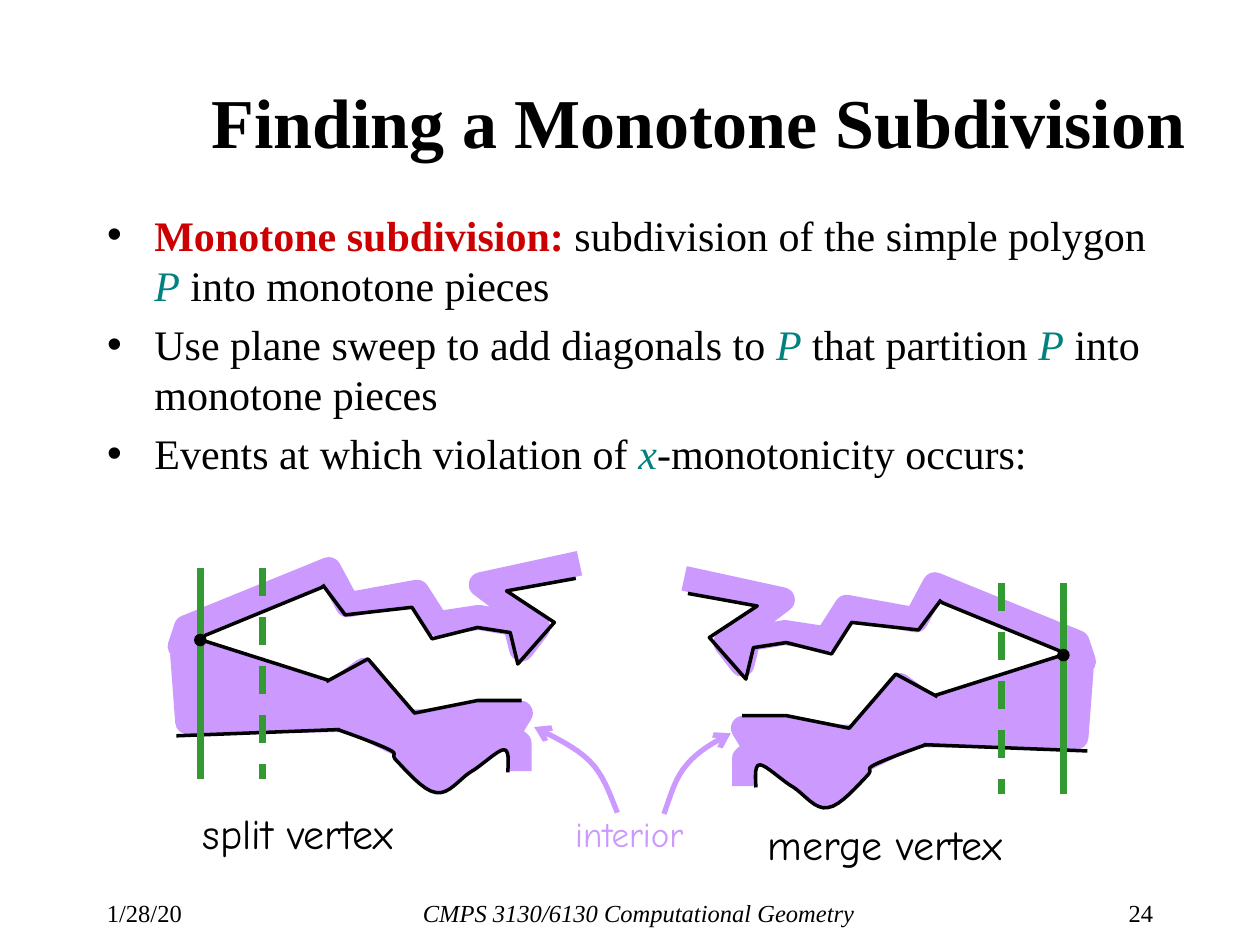
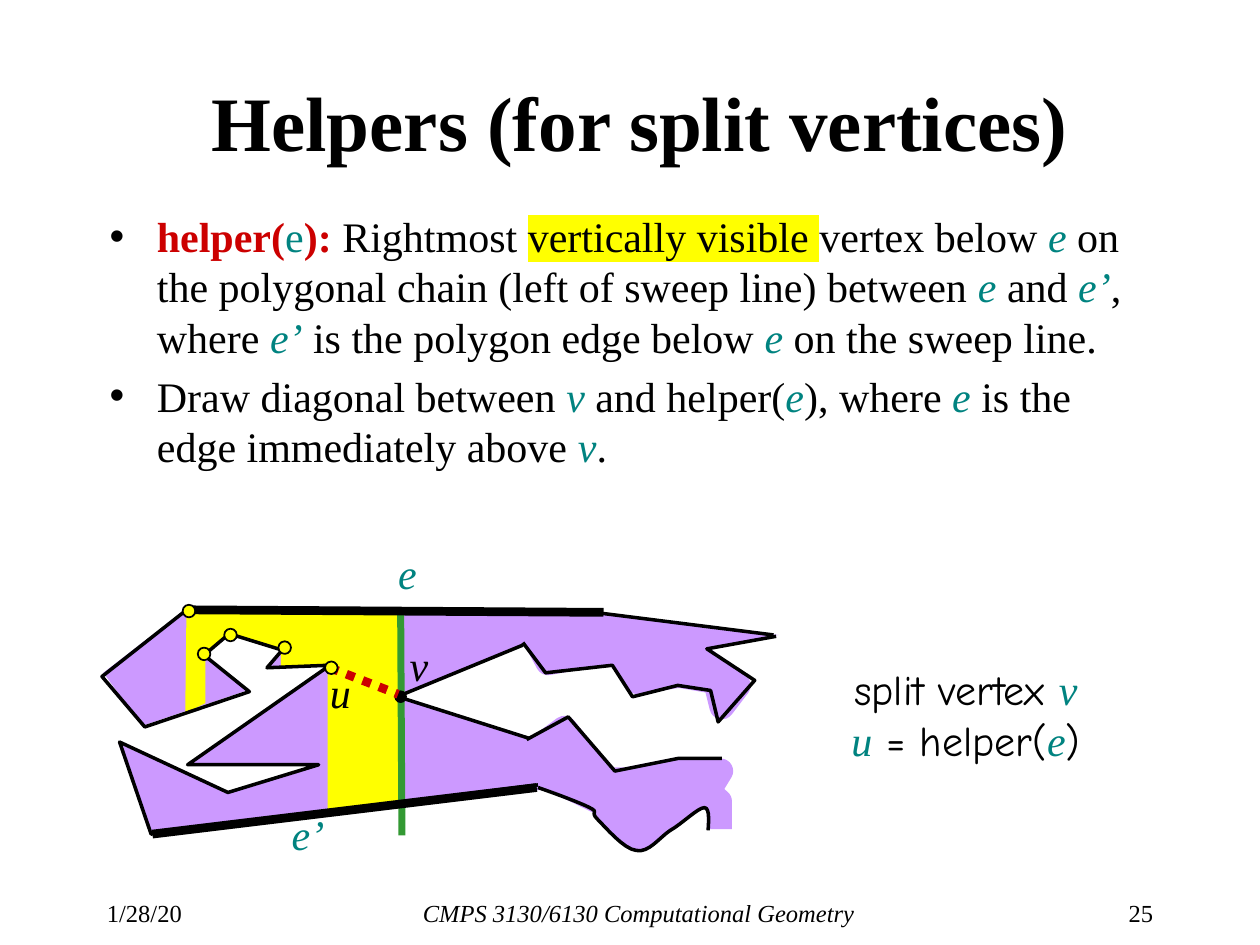
from dataclasses import dataclass

from lxml import etree
from pptx import Presentation
from pptx import util as u
from pptx.dml.color import RGBColor
from pptx.enum import dml, shapes, text
from pptx.oxml.ns import qn


@dataclass(frozen=True)
class Theme:
    ink: str = "000000"
    term: str = "CC0000"
    math: str = "008380"
    interior: str = "CC99FF"
    sweep: str = "339933"
    mark: str = "FFFF00"
    serif: str = "Times New Roman"
    hand: str = "Comic Neue"
    body: int = 24
    small_label: int = 20
    footer: int = 14
    band: float = 14.25
    edge: int = 2
    bold_edge: int = 5
    sweep_width: int = 4


THEME = Theme()
DOT = 0.1

# Split vertex figure, in inches on the first slide
LOWER_FILL = [(2.62, 5.52), (2.89, 5.32), (3.21, 5.73), (3.38, 5.73), (3.79, 5.65),
              (4.13, 5.66), (4.02, 5.84), (3.4, 6.12), (3.13, 5.86)]
LEFT_FILL = [(1.45, 5.2), (1.49, 5.73), (2.59, 5.66), (2.55, 5.49)]
LOWER_BAND = [(1.48, 5.73), (2.77, 5.71), (3.2, 5.92), (3.31, 6.07), (3.47, 6.2),
              (3.89, 5.87), (4.04, 5.83), (4.12, 5.9), (4.12, 6.12)]
UPPER_BAND = [(2.6, 5.49), (1.43, 5.13), (1.48, 4.98), (2.61, 4.52), (2.76, 4.8),
              (3.31, 4.7), (3.47, 4.95), (3.8, 4.9), (4.09, 4.95), (4.14, 5.15),
              (4.27, 4.98), (3.82, 4.64)]
UPPER_CHAIN = [(2.56, 4.64), (2.74, 4.88), (3.27, 4.82), (3.43, 5.07), (3.79, 4.98),
               (4.05, 5.02), (4.11, 5.27), (4.4, 4.94), (4.02, 4.69), (4.57, 4.59)]
LOWER_CHAIN = [(2.59, 5.41), (2.92, 5.23), (3.29, 5.66), (3.79, 5.56), (4.14, 5.56)]
WAVE = [(2.68, 5.79), (2.85, 5.85), (3.01, 5.91), (3.09, 5.95),
        (3.17, 5.99), (3.09, 5.98), (3.15, 6.04), (3.21, 6.1), (3.36, 6.28), (3.46, 6.29),
        (3.56, 6.31), (3.64, 6.19), (3.73, 6.13), (3.82, 6.08), (3.95, 5.95), (4, 5.95),
        (4.05, 5.95), (4.03, 6.1), (4.03, 6.13)]
SPLIT_EDGES = [[(1.61, 5.05), (2.56, 4.66)], [(1.57, 5.07), (2.61, 5.4)]]
FLOOR = [(1.4, 5.84), (2.7, 5.79)]
SPLIT_VERTEX = (1.59, 5.08)
SWEEP_NOW = [(1.59, 4.51), (1.59, 6.18)]
SWEEP_NEXT = [(2.08, 4.51), (2.08, 6.18)]
INTERIOR_ARROWS = [[(4.9, 6.45), (4.84, 6.3), (4.79, 6.15), (4.68, 6.04),
                    (4.57, 5.93), (4.4, 5.85), (4.24, 5.77)],
                   [(5.27, 6.46), (5.32, 6.32), (5.36, 6.17), (5.45, 6.07),
                    (5.54, 5.96), (5.67, 5.89), (5.8, 5.82)]]

# Helper figure on the second slide
POLYGON = [(1.47, 4.84), (0.82, 5.34), (1.13, 5.76), (1.96, 5.48), (1.62, 5.2),
           (1.82, 5.02), (2.24, 5.14), (2.12, 5.3), (2.62, 5.27), (1.51, 6.06),
           (2.52, 6.06), (1.81, 6.3), (0.94, 5.9), (1.2, 6.6), (4.25, 6.23),
           (4.14, 5.97), (3.15, 5.52), (4.16, 5.11), (4.52, 5.22), (4.95, 5.21),
           (5.09, 5.37), (5.6, 5.32), (5.61, 5.15), (6.18, 5.04), (5.59, 4.98),
           (4.78, 4.87)]
VISIBLE_REGION = [(1.48, 4.84), (1.47, 5.66), (1.63, 5.58), (1.63, 5.18), (1.81, 5.04),
                  (2.23, 5.15), (2.23, 5.29), (2.6, 5.27), (2.6, 6.46), (3.18, 6.39),
                  (3.18, 4.85)]
LEFT_CHAIN = [(6.14, 5.04), (4.79, 4.87), (2.33, 4.86), (1.47, 4.85), (0.81, 5.37),
              (1.15, 5.77), (1.98, 5.49), (1.62, 5.2), (1.82, 5.03), (2.24, 5.16),
              (2.12, 5.3), (2.62, 5.28), (1.49, 6.07), (2.53, 6.07), (1.81, 6.29),
              (0.95, 5.89), (1.2, 6.62), (4.27, 6.23)]
VISIBLE_VERTICES = [(1.62, 5.19), (1.83, 5.04), (2.26, 5.14), (2.63, 5.3), (1.5, 4.85)]


@dataclass(frozen=True)
class Placement:
    """Moves figure points by (dx, dy), after an optional left-right flip."""
    dx: float = 0
    dy: float = 0
    mirrored: bool = False

    def at(self, points):
        sign = -1 if self.mirrored else 1
        return [(sign * x + self.dx, y + self.dy) for x, y in points]


def rgb(color):
    return RGBColor.from_string(color)


def math(words):
    return words, "math"


def term(words):
    return words, "term"


def write(paragraph, parts, size, color=THEME.ink, font=THEME.serif, italic=False):
    """Fill a paragraph from plain strings and (words, style) pairs."""
    base = paragraph.font
    base.name, base.size, base.italic = font, u.Pt(size), italic
    base.color.rgb = rgb(color)
    for part in parts:
        words, style = (part, None) if isinstance(part, str) else part
        run = paragraph.add_run()
        run.text = words
        if style in ("math", "upright"):
            run.font.color.rgb = rgb(THEME.math)
            run.font.name = THEME.serif
            run.font.italic = style == "math"
        elif style == "term":
            run.font.color.rgb = rgb(THEME.term)
            run.font.bold = True
        elif style == "mark":
            highlight = etree.SubElement(run.font._element, qn("a:highlight"))
            etree.SubElement(highlight, qn("a:srgbClr"), val=THEME.mark)


def label(slide, box, lines, size=THEME.body, align=text.PP_ALIGN.CENTER, **style):
    frame = slide.shapes.add_textbox(*map(u.Inches, box)).text_frame
    frame.word_wrap = True
    for number, parts in enumerate(lines):
        paragraph = frame.add_paragraph() if number else frame.paragraphs[0]
        paragraph.alignment = align
        write(paragraph, parts, size, **style)


def move(shape, box):
    shape.left, shape.top, shape.width, shape.height = map(u.Inches, box)


def add_slide(deck, title, title_size, bullets, body_box, number):
    slide = deck.slides.add_slide(deck.slide_layouts[1])
    heading, body = slide.placeholders
    move(heading, (1.58, 0.33, 8.25, 1.25))
    heading.text_frame.vertical_anchor = text.MSO_ANCHOR.MIDDLE
    heading.text_frame.auto_size = text.MSO_AUTO_SIZE.NONE
    title_line = heading.text_frame.paragraphs[0]
    title_line.alignment = text.PP_ALIGN.LEFT
    write(title_line, [title], title_size)
    title_line.font.bold = True

    move(body, body_box)
    body.text_frame.auto_size = text.MSO_AUTO_SIZE.NONE
    for index, parts in enumerate(bullets):
        bullet = body.text_frame.add_paragraph() if index else body.text_frame.paragraphs[0]
        write(bullet, parts, THEME.body)
        bullet_color = etree.Element(qn("a:buClr"))
        etree.SubElement(bullet_color, qn("a:srgbClr"), val=THEME.ink)
        bullet._p.get_or_add_pPr().insert(0, bullet_color)

    label(slide, (0.75, 7.08, 0.95, 0.25), [["1/28/20"]], THEME.footer, text.PP_ALIGN.LEFT)
    label(slide, (1.9, 7.08, 6.34, 0.25), [["CMPS 3130/6130 Computational Geometry"]],
          THEME.footer, italic=True)
    label(slide, (8.43, 7.08, 0.82, 0.25), [[str(number)]], THEME.footer, text.PP_ALIGN.RIGHT)
    return slide


def outline(shape, color, width):
    shape.line.color.rgb = rgb(color)
    shape.line.width = u.Pt(width)


def path(slide, points, fill=None, line=None, width=THEME.edge, arrow=False):
    """Draw a polyline; it is closed when it has a fill."""
    (start, *rest) = [(u.Inches(x), u.Inches(y)) for x, y in points]
    builder = slide.shapes.build_freeform(*start)
    builder.add_line_segments(rest, close=fill is not None)
    shape = builder.convert_to_shape()
    shape.shadow.inherit = False
    if fill:
        shape.fill.solid()
        shape.fill.fore_color.rgb = rgb(fill)
    else:
        shape.fill.background()
    if line:
        outline(shape, line, width)
        ln = shape.line._get_or_add_ln()
        etree.SubElement(ln, qn("a:round"))
        if arrow:
            etree.SubElement(ln, qn("a:tailEnd"), type="arrow")
    else:
        shape.line.fill.background()


def segment(slide, ends, color=THEME.ink, width=THEME.edge, dash=None):
    (x1, y1), (x2, y2) = ends
    line = slide.shapes.add_connector(shapes.MSO_CONNECTOR.STRAIGHT,
                                      *map(u.Inches, (x1, y1, x2, y2)))
    outline(line, color, width)
    if dash:
        line.line.dash_style = dash
    etree.SubElement(line._element.spPr, qn("a:effectLst"))


def vertex(slide, center, fill=THEME.ink, ringed=False):
    x, y = center
    dot = slide.shapes.add_shape(shapes.MSO_SHAPE.OVAL, u.Inches(x - DOT / 2),
                                 u.Inches(y - DOT / 2), u.Inches(DOT), u.Inches(DOT))
    dot.shadow.inherit = False
    dot.fill.solid()
    dot.fill.fore_color.rgb = rgb(fill)
    if ringed:
        outline(dot, THEME.ink, 1)
    else:
        dot.line.fill.background()


def flatten(controls, steps=8):
    """Turn chained cubic Bezier controls into polyline points."""
    points = [controls[0]]
    for first in range(0, len(controls) - 1, 3):
        curve = controls[first:first + 4]
        for step in range(1, steps + 1):
            t = step / steps
            weights = ((1 - t) ** 3, 3 * t * (1 - t) ** 2, 3 * t * t * (1 - t), t ** 3)
            points.append(tuple(sum(w * p[axis] for w, p in zip(weights, curve))
                                for axis in (0, 1)))
    return points


def draw_interior(slide, place, upper_end):
    for area in (LOWER_FILL, LEFT_FILL):
        path(slide, place.at(area), THEME.interior, THEME.interior, THEME.band)
    for band in (LOWER_BAND, UPPER_BAND + [upper_end]):
        path(slide, place.at(band), line=THEME.interior, width=THEME.band)


def draw_boundary(slide, place):
    for edge in SPLIT_EDGES:
        segment(slide, place.at(edge))
    for chain in (flatten(WAVE), UPPER_CHAIN, LOWER_CHAIN):
        path(slide, place.at(chain), line=THEME.ink)


def draw_event(slide, place):
    draw_interior(slide, place, (4.6, 4.47))
    segment(slide, place.at(FLOOR))
    segment(slide, place.at(SWEEP_NEXT), THEME.sweep, THEME.sweep_width, dml.MSO_LINE.DASH)
    draw_boundary(slide, place)
    segment(slide, place.at(SWEEP_NOW), THEME.sweep, THEME.sweep_width)
    vertex(slide, place.at([SPLIT_VERTEX])[0])


def subdivision_slide(deck):
    slide = add_slide(deck, "Finding a Monotone Subdivision", 40, [
        [term("Monotone subdivision:"), " subdivision of the simple polygon ", math("P"),
         " into monotone pieces"],
        ["Use plane sweep to add diagonals to ", math("P"), " that partition ", math("P"),
         " into monotone pieces"],
        ["Events at which violation of ", math("x"), "-monotonicity occurs:"],
    ], (0.75, 1.61, 8.5, 4.5), 24)
    draw_event(slide, Placement())
    draw_event(slide, Placement(10.03, 0.12, mirrored=True))
    label(slide, (0.97, 6.36, 2.79, 0.5), [["split vertex"]], font=THEME.hand)
    label(slide, (5.63, 6.45, 2.79, 0.5), [["merge vertex"]], font=THEME.hand)
    label(slide, (4.23, 6.4, 1.53, 0.43), [["interior"]], THEME.small_label,
          color=THEME.interior, font=THEME.hand)
    for arrow in INTERIOR_ARROWS:
        path(slide, flatten(arrow), line=THEME.interior, width=3, arrow=True)


def helpers_slide(deck):
    slide = add_slide(deck, "Helpers (for split vertices)", 44, [
        [term("helper("), ("e", "upright"), term("): "), "Rightmost ",
         ("vertically visible ", "mark"), "vertex below ", math("e"),
         " on the polygonal chain (left of sweep line) between ", math("e"), " and ",
         math("e’"), ", where ", math("e’"), " is the polygon edge below ", math("e"),
         " on the sweep line."],
        ["Draw diagonal between ", math("v"), " and helper(", math("e"), "), where ",
         math("e"), " is the edge immediately above ", math("v"), "."],
    ], (0.77, 1.62, 8.5, 4.5), 25)
    place = Placement(1.59, 0.46)
    path(slide, POLYGON, THEME.interior)
    draw_interior(slide, place, (3.95, 4.61))
    path(slide, VISIBLE_REGION, THEME.mark)
    draw_boundary(slide, place)
    segment(slide, [(3.18, 4.87), (3.19, 6.63)], THEME.sweep, THEME.sweep_width)
    vertex(slide, (3.18, 5.53))
    path(slide, LEFT_CHAIN, line=THEME.ink)
    for edge in ([(1.48, 4.84), (4.79, 4.86)], [(1.21, 6.62), (4.26, 6.25)]):
        segment(slide, edge, width=THEME.bold_edge)
    segment(slide, [(2.62, 5.3), (3.16, 5.51)], THEME.term, THEME.bold_edge,
            dml.MSO_LINE.ROUND_DOT)
    for center in VISIBLE_VERTICES:
        vertex(slide, center, THEME.mark, ringed=True)
    label(slide, (6.27, 5.22, 2.79, 0.9),
          [["split vertex ", math("v")], [math("u"), " = helper(", math("e"), ")"]],
          font=THEME.hand)
    label(slide, (3.11, 5.03, 0.43, 0.5), [["v"]], italic=True)
    label(slide, (2.52, 5.24, 0.56, 0.5), [["u"]], align=text.PP_ALIGN.LEFT, italic=True)
    label(slide, (2.8, 4.3, 0.87, 0.5), [[math("e")]])
    label(slide, (2.01, 6.37, 0.87, 0.5), [[math("e’")]])


def main():
    deck = Presentation()
    deck.slide_width, deck.slide_height = u.Inches(10), u.Inches(7.5)
    subdivision_slide(deck)
    helpers_slide(deck)
    deck.save("out.pptx")


if __name__ == "__main__":
    main()
